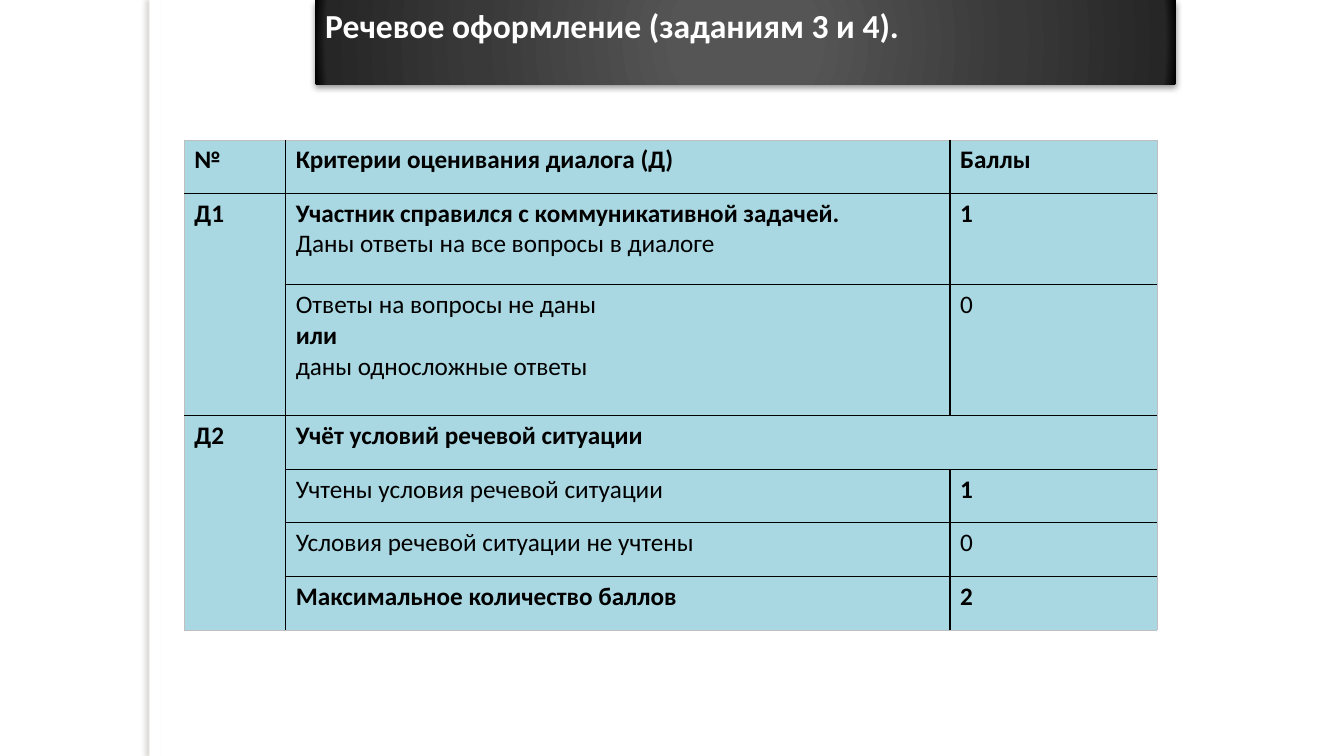
"""Build the slide with the assessment criteria for the dialogue tasks."""
from typing import NamedTuple

from lxml.etree import SubElement
from pptx import Presentation
from pptx.dml.color import RGBColor
from pptx.enum.shapes import MSO_SHAPE
from pptx.enum.text import MSO_ANCHOR, MSO_AUTO_SIZE, PP_ALIGN
from pptx.oxml import parse_xml
from pptx.oxml.ns import nsdecls, qn
from pptx.util import Pt

FONT = "Calibri"
WHITE = RGBColor(0xFF, 0xFF, 0xFF)
BLACK = RGBColor(0x00, 0x00, 0x00)
EDGE_GREY = RGBColor(0xBF, 0xBF, 0xBF)
CELL_BLUE = RGBColor(0xA9, 0xD7, 0xE2)
STRIP_SHADE = RGBColor(0x73, 0x6F, 0x63)
HEADING_STOPS = (
    (0, RGBColor(0x55, 0x55, 0x55)),
    (15, RGBColor(0x55, 0x55, 0x55)),
    (62, RGBColor(0x39, 0x39, 0x39)),
    (97, RGBColor(0x26, 0x26, 0x26)),
    (100, BLACK),
)
COLUMN_WIDTHS = (72.5, 474.5, 147.6)
ROW_HEIGHTS = (38.2, 65.5, 93.6, 38.2, 38.2, 38.2, 38.2)


class Shadow(NamedTuple):
    color: RGBColor
    alpha: int
    blur: float
    distance: float
    angle: int


class Line(NamedTuple):
    text: str
    bold: bool = False


class Entry(NamedTuple):
    row: int
    column: int
    lines: tuple[Line, ...]
    rows: int = 1
    columns: int = 1


ENTRIES = (
    Entry(0, 0, (Line("№", True),)),
    Entry(0, 1, (Line("Критерии оценивания диалога (Д)", True),)),
    Entry(0, 2, (Line("Баллы", True),)),
    Entry(1, 0, (Line("Д1", True),), rows=2),
    Entry(1, 1, (Line("Участник справился с коммуникативной задачей.", True),
                 Line("Даны ответы на все вопросы в диалоге"))),
    Entry(1, 2, (Line("1", True),)),
    Entry(2, 1, (Line("Ответы на вопросы не даны"), Line("или", True),
                 Line("даны односложные ответы"))),
    Entry(2, 2, (Line("0"),)),
    Entry(3, 0, (Line("Д2", True),), rows=4),
    Entry(3, 1, (Line("Учёт условий речевой ситуации", True),), columns=2),
    Entry(4, 1, (Line("Учтены условия речевой ситуации"),)),
    Entry(4, 2, (Line("1", True),)),
    Entry(5, 1, (Line("Условия речевой ситуации не учтены"),)),
    Entry(5, 2, (Line("0"),)),
    Entry(6, 1, (Line("Максимальное количество баллов", True),)),
    Entry(6, 2, (Line("2", True),)),
)


def place(shape, left: float, top: float, width: float, height: float) -> None:
    shape.left, shape.top = Pt(left), Pt(top)
    shape.width, shape.height = Pt(width), Pt(height)


def cast_shadow(shape, shadow: Shadow) -> None:
    shape.shadow.inherit = False
    effects = shape._element.spPr.find(qn("a:effectLst"))
    outer = SubElement(effects, qn("a:outerShdw"), blurRad=str(Pt(shadow.blur)),
                       dist=str(Pt(shadow.distance)), dir=str(shadow.angle * 60000),
                       algn="ctr", rotWithShape="0")
    color = SubElement(outer, qn("a:srgbClr"), val=str(shadow.color))
    SubElement(color, qn("a:alpha"), val=str(shadow.alpha * 1000))


def fill_radially(shape, stops: tuple[tuple[int, RGBColor], ...]) -> None:
    shape.fill.background()
    properties = shape._element.spPr
    marks = "".join(f'<a:gs pos="{position * 1000}"><a:srgbClr val="{color}"/></a:gs>'
                    for position, color in stops)
    gradient = parse_xml(
        f'<a:gradFill {nsdecls("a")} rotWithShape="1"><a:gsLst>{marks}</a:gsLst>'
        '<a:path path="circle"><a:fillToRect l="50000" t="50000" r="50000" b="50000"/>'
        '</a:path></a:gradFill>')
    properties.replace(properties.find(qn("a:noFill")), gradient)


def format_run(run, size: float, color: RGBColor, bold: bool) -> None:
    run.font.name = FONT
    run.font.size = Pt(size)
    run.font.bold = bold
    run.font.color.rgb = color


def draw_borders(cell, entry: Entry) -> None:
    outer_sides = {
        "a:lnL": entry.column == 0,
        "a:lnR": entry.column + entry.columns == len(COLUMN_WIDTHS),
        "a:lnT": entry.row == 0,
        "a:lnB": entry.row + entry.rows == len(ROW_HEIGHTS),
    }
    properties = cell._tc.get_or_add_tcPr()
    for side, outer in outer_sides.items():
        border = SubElement(properties, qn(side), w=str(Pt(0.25 if outer else 1)))
        paint = SubElement(border, qn("a:solidFill"))
        SubElement(paint, qn("a:srgbClr"), val=str(EDGE_GREY if outer else BLACK))


def write_entry(criteria, entry: Entry) -> None:
    cell = criteria.cell(entry.row, entry.column)
    if entry.rows * entry.columns > 1:
        cell.merge(criteria.cell(entry.row + entry.rows - 1,
                                 entry.column + entry.columns - 1))
    draw_borders(cell, entry)
    cell.fill.solid()
    cell.fill.fore_color.rgb = CELL_BLUE
    cell.text_frame.text = "\n".join(line.text for line in entry.lines)
    for paragraph, line in zip(cell.text_frame.paragraphs, entry.lines):
        format_run(paragraph.runs[0], 18, BLACK, line.bold)


def add_side_strip(slide) -> None:
    strip = slide.shapes.add_shape(MSO_SHAPE.RECTANGLE, Pt(106.6), Pt(0), Pt(7.9), Pt(540))
    strip.fill.solid()
    strip.fill.fore_color.rgb = WHITE
    strip.line.fill.background()
    cast_shadow(strip, Shadow(STRIP_SHADE, 25, 3, 3, 180))


def write_heading(slide) -> None:
    heading = slide.shapes.title
    place(heading, 225, 0, 615, 36.4)
    fill_radially(heading, HEADING_STOPS)
    cast_shadow(heading, Shadow(BLACK, 43, 5, 2, 90))
    frame = heading.text_frame
    frame.text = "Речевое оформление (заданиям 3 и 4)."
    frame.word_wrap = True
    frame.auto_size = MSO_AUTO_SIZE.SHAPE_TO_FIT_TEXT
    frame.vertical_anchor = MSO_ANCHOR.TOP
    paragraph = frame.paragraphs[0]
    paragraph.alignment = PP_ALIGN.LEFT
    paragraph.line_spacing = 1.0
    paragraph.space_before = Pt(0)
    format_run(paragraph.runs[0], 24, WHITE, True)


def add_criteria(slide) -> None:
    criteria = slide.shapes.add_table(
        len(ROW_HEIGHTS), len(COLUMN_WIDTHS), Pt(131.6), Pt(99.8),
        Pt(sum(COLUMN_WIDTHS)), Pt(sum(ROW_HEIGHTS))).table
    criteria.first_row = criteria.horz_banding = False
    for column, width in zip(criteria.columns, COLUMN_WIDTHS):
        column.width = Pt(width)
    for row, height in zip(criteria.rows, ROW_HEIGHTS):
        row.height = Pt(height)
    for entry in ENTRIES:
        write_entry(criteria, entry)


def main() -> None:
    deck = Presentation()
    deck.slide_width, deck.slide_height = Pt(960), Pt(540)
    slide = deck.slides.add_slide(deck.slide_layouts[5])
    add_side_strip(slide)
    write_heading(slide)
    add_criteria(slide)
    deck.save("out.pptx")


if __name__ == "__main__":
    main()
